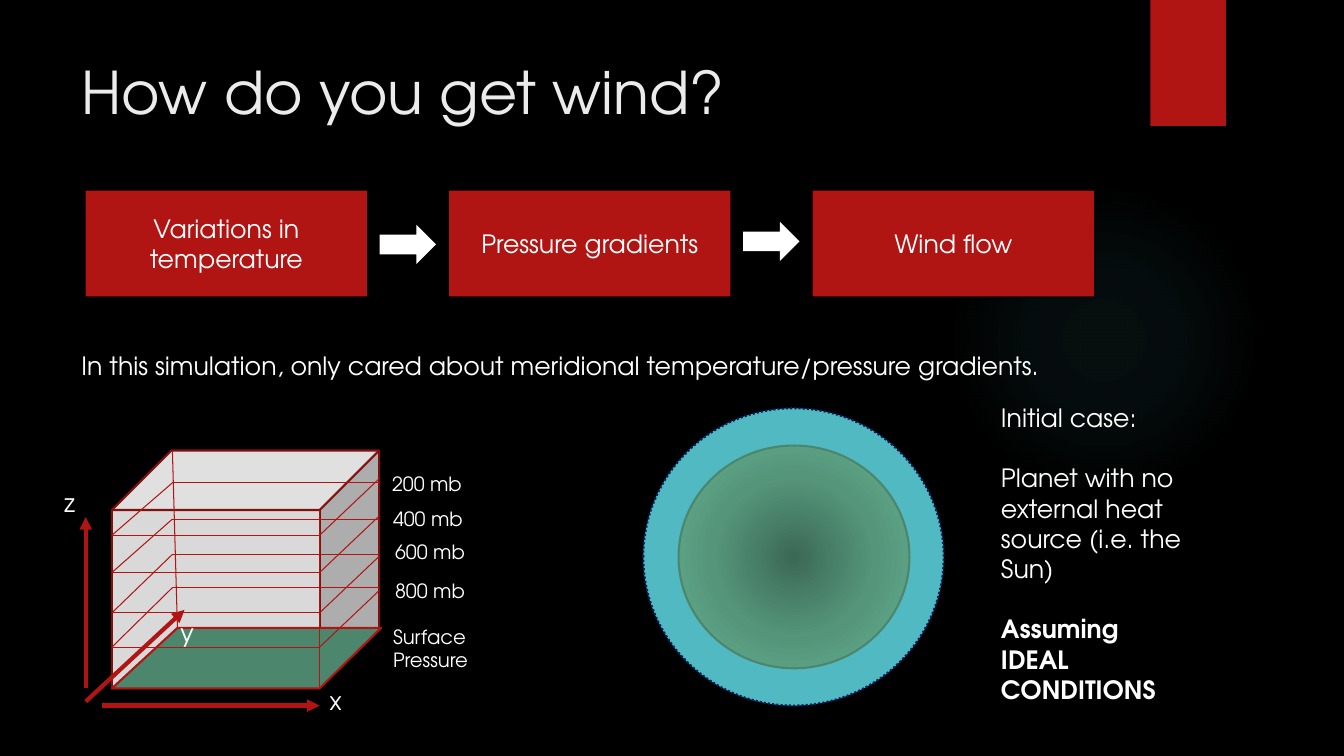
from lxml import etree
from pptx import Presentation
from pptx.dml.color import RGBColor
from pptx.enum.dml import MSO_LINE
from pptx.enum.shapes import MSO_CONNECTOR, MSO_SHAPE
from pptx.enum.text import MSO_ANCHOR, PP_ALIGN
from pptx.oxml.ns import qn
from pptx.util import Inches, Pt

FONT = "TeX Gyre Adventor"
BLACK = RGBColor(0x00, 0x00, 0x00)
WHITE = RGBColor(0xFF, 0xFF, 0xFF)
OFF_WHITE = RGBColor(0xEB, 0xEB, 0xEB)
RED = RGBColor(0xB0, 0x15, 0x13)
DARK_RED = RGBColor(0x82, 0x10, 0x0E)
GRAY = RGBColor(0xD9, 0xD9, 0xD9)
GREEN = RGBColor(0x4B, 0x86, 0x6D)
DEEP_GREEN = RGBColor(0x3C, 0x69, 0x56)
MID_GREEN = RGBColor(0x55, 0x95, 0x7A)
LIGHT_GREEN = RGBColor(0x65, 0xB1, 0x91)
TEAL = RGBColor(0x50, 0xB9, 0xC1)
NAVY = RGBColor(0x00, 0x20, 0x60)

LINE = MSO_CONNECTOR.STRAIGHT
RECTANGLE = MSO_SHAPE.RECTANGLE
OVAL = MSO_SHAPE.OVAL
CUBE = MSO_SHAPE.CUBE
RIGHT_ARROW = MSO_SHAPE.RIGHT_ARROW
DOTTED = MSO_LINE.ROUND_DOT
CENTER = PP_ALIGN.CENTER
MIDDLE = MSO_ANCHOR.MIDDLE


def style_shape(shape, fill=None, outline=None, width=1.5):
    shape.shadow.inherit = False
    if fill is not None:
        shape.fill.solid()
        shape.fill.fore_color.rgb = fill
    if outline is None:
        shape.line.fill.background()
    else:
        shape.line.color.rgb = outline
        shape.line.width = Pt(width)


def add_shape(slide, kind, box, fill=None, outline=None):
    shape = slide.shapes.add_shape(kind, *map(Inches, box))
    style_shape(shape, fill, outline)
    return shape


def fill_radial(shape, stops):
    """Fill from the centre outwards with (position, colour, opacity) stops in percent."""
    shape.fill.gradient()
    gradient = shape.element.spPr.find(qn("a:gradFill"))
    for child in list(gradient):
        gradient.remove(child)
    stop_list = etree.SubElement(gradient, qn("a:gsLst"))
    for position, color, opacity in stops:
        stop = etree.SubElement(stop_list, qn("a:gs"), pos=str(position * 1000))
        value = etree.SubElement(stop, qn("a:srgbClr"), val=str(color))
        etree.SubElement(value, qn("a:alpha"), val=str(opacity * 1000))
    circle = etree.SubElement(gradient, qn("a:path"), attrib={"path": "circle"})
    etree.SubElement(circle, qn("a:fillToRect"), l="50000", t="50000", r="50000", b="50000")


def write_text(frame, paragraphs, gap=0, align=None, **formats):
    frame.word_wrap = True
    font_values = {"name": FONT, "size": Pt(18), "bold": False, **formats}
    color = font_values.pop("color", WHITE)
    for index, text in enumerate(paragraphs):
        paragraph = frame.add_paragraph() if index else frame.paragraphs[0]
        paragraph.text = text
        paragraph.alignment = align
        if index:
            paragraph.space_before = Pt(gap)
        for name, value in font_values.items():
            setattr(paragraph.font, name, value)
        paragraph.font.color.rgb = color


def add_text(slide, box, *paragraphs, **formats):
    frame = slide.shapes.add_textbox(*map(Inches, box)).text_frame
    write_text(frame, paragraphs, **formats)
    return frame


def add_line(slide, start, end, width=0.75, arrow=False):
    line = slide.shapes.add_connector(LINE, *map(Inches, (*start, *end)))
    line.line.color.rgb = RED
    line.line.width = Pt(width)
    if arrow:
        etree.SubElement(line.line._get_or_add_ln(), qn("a:tailEnd"), type="triangle")
    etree.SubElement(line.element.spPr, qn("a:effectLst"))


def add_backdrop(slide):
    slide.background.fill.solid()
    slide.background.fill.fore_color.rgb = BLACK
    glow = add_shape(slide, OVAL, (9.41, 1.83, 3.08, 3.08))
    fill_radial(glow, [(0, TEAL, 7), (36, TEAL, 6), (69, TEAL, 0)])
    add_shape(slide, RECTANGLE, (11.41, 0, 0.75, 1.25), RED)


def add_flow(slide, box, steps):
    left, top, width, height = box
    step_width = 2.79
    pitch = (width - step_width) / (len(steps) - 1)
    for index, step in enumerate(steps):
        x = left + index * pitch
        card = add_shape(slide, RECTANGLE, (x, top, step_width, height), RED)
        card.text_frame.vertical_anchor = MIDDLE
        write_text(card.text_frame, [step], align=CENTER)
        if index:
            arrow_top = top + 0.37 - 0.03 * index
            add_shape(slide, RIGHT_ARROW, (x - 0.69, arrow_top, 0.56, 0.39), WHITE)


def add_atmosphere_cube(slide, box):
    left, top, width, height = box
    depth = height / 4
    right, bottom = left + width, top + height
    front_right, back_left = right - depth, left + 0.6
    add_shape(slide, CUBE, box, GRAY, DARK_RED)

    # Ground surface
    ground_top = bottom - 0.6
    corners = [(left + 0.65, ground_top), (right + 0.02, ground_top),
               (front_right, bottom), (left, bottom)]
    points = [(Inches(x), Inches(y)) for x, y in corners]
    builder = slide.shapes.build_freeform(*points[0], scale=1.0)
    builder.add_line_segments(points[1:], close=True)
    style_shape(builder.convert_to_shape(), GREEN, RED)

    # Upright edges
    add_line(slide, (front_right, top + depth), (front_right, bottom))
    add_line(slide, (back_left, top), corners[0])

    # Pressure levels: front height, back height, label left and top
    levels = [
        ("200 mb", 0.84, 0.32, 0.03, 0.16),
        ("400 mb", 1.21, 0.68, 0.04, 0.51),
        ("600 mb", 1.61, 1.03, 0.06, 0.84),
        ("800 mb", 1.95, 1.36, 0.06, 1.22),
    ]
    for label, front, back, label_left, label_top in levels:
        front_y, back_y = top + front, top + back
        add_line(slide, (left, front_y), (front_right, front_y))
        add_line(slide, (back_left, back_y), (right, back_y))
        add_line(slide, (left, front_y), (back_left, back_y))
        add_line(slide, (front_right, front_y), (right, front_y - 0.56))
        add_text(slide, (right + label_left, top + label_top, 0.97, 0.34), label, size=Pt(14))
    add_text(slide, (right + 0.04, top + 1.68, 0.97, 0.57), "Surface Pressure", size=Pt(14))


def add_axes(slide, box):
    left, top, width, height = box
    bottom = top + height
    axes = [
        ("x", (left + 0.16, bottom), (left + width, bottom), (left + width, bottom - 0.25)),
        ("z", (left, bottom - 0.17), (left, top), (left - 0.31, top - 0.34)),
        ("y", (left, bottom - 0.04), (left + 0.98, top + 0.92), (left + 0.84, top + 0.95)),
    ]
    for name, start, end, label_at in axes:
        add_line(slide, start, end, width=3, arrow=True)
        add_text(slide, (*label_at, 0.47, 0.4), name)


def add_planet(slide, box):
    left, top, width, height = box
    air = add_shape(slide, OVAL, box, TEAL, NAVY)
    air.line.dash_style = DOTTED
    globe_box = (left + 0.35, top + 0.37, width - 0.69, height - 0.74)
    globe = add_shape(slide, OVAL, globe_box, outline=GREEN)
    fill_radial(globe, [(0, DEEP_GREEN, 100), (50, MID_GREEN, 100), (100, LIGHT_GREEN, 100)])


def add_initial_case(slide, box):
    frame = add_text(slide, box, "Initial case:",
                     "Planet with no external heat source (i.e. the Sun)",
                     "Assuming IDEAL CONDITIONS", gap=21.6)
    frame.paragraphs[-1].font.bold = True


def main():
    presentation = Presentation()
    presentation.slide_width = Inches(13.33)
    presentation.slide_height = Inches(7.5)
    slide = presentation.slides.add_slide(presentation.slide_layouts[6])

    add_backdrop(slide)
    add_text(slide, (0.71, 0.5, 10.29, 1.53), "How do you get wind?",
             size=Pt(42), color=OFF_WHITE)
    add_flow(slide, (0.85, 1.89, 10, 1.05),
             ["Variations in temperature", "Pressure gradients", "Wind flow"])
    add_text(slide, (0.71, 3.43, 10.2, 0.4),
             "In this simulation, only cared about meridional temperature/pressure gradients.")
    add_atmosphere_cube(slide, (1.11, 4.47, 2.65, 2.36))
    add_planet(slide, (6.38, 4.05, 2.98, 2.95))
    add_initial_case(slide, (9.83, 3.94, 2.03, 3.13))
    add_axes(slide, (0.85, 5.13, 2.32, 1.87))

    presentation.save("out.pptx")


if __name__ == "__main__":
    main()
